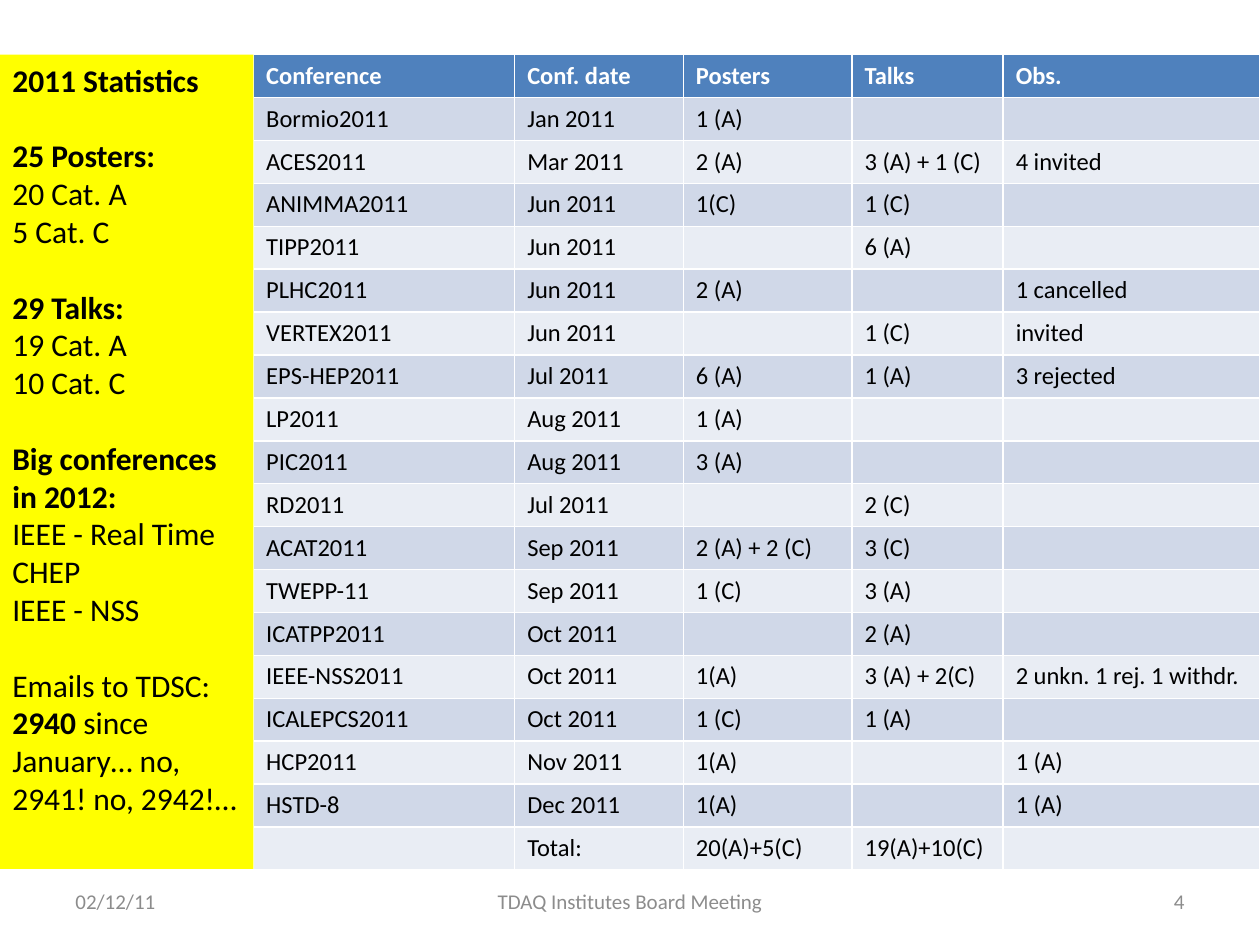
from lxml import etree
from pptx import Presentation
from pptx.dml.color import RGBColor
from pptx.enum.shapes import MSO_SHAPE
from pptx.enum.text import MSO_ANCHOR, PP_ALIGN
from pptx.oxml.ns import qn
from pptx.util import Pt

RECTANGLE = MSO_SHAPE.RECTANGLE
TOP, MIDDLE = MSO_ANCHOR.TOP, MSO_ANCHOR.MIDDLE
LEFT, CENTER, RIGHT = PP_ALIGN.LEFT, PP_ALIGN.CENTER, PP_ALIGN.RIGHT

BLACK = RGBColor(0x00, 0x00, 0x00)
WHITE = RGBColor(0xFF, 0xFF, 0xFF)
GRAY = RGBColor(0x8C, 0x8C, 0x8C)
YELLOW = RGBColor(0xFF, 0xFF, 0x00)
HEADER_BLUE = RGBColor(0x4F, 0x81, 0xBD)
BANDS = (RGBColor(0xD0, 0xD8, 0xE8), RGBColor(0xE9, 0xED, 0xF4))
FONT = "Calibri"

# Content
CONFERENCES = [
    ("Conference", "Conf. date", "Posters", "Talks", "Obs."),
    ("Bormio2011", "Jan 2011", "1 (A)", "", ""),
    ("ACES2011", "Mar 2011", "2 (A)", "3 (A) + 1 (C)", "4 invited"),
    ("ANIMMA2011", "Jun 2011", "1(C)", "1 (C)", ""),
    ("TIPP2011", "Jun 2011", "", "6 (A)", ""),
    ("PLHC2011", "Jun 2011", "2 (A)", "", "1 cancelled"),
    ("VERTEX2011", "Jun 2011", "", "1 (C)", "invited"),
    ("EPS-HEP2011", "Jul 2011", "6 (A)", "1 (A)", "3 rejected"),
    ("LP2011", "Aug 2011", "1 (A)", "", ""),
    ("PIC2011", "Aug 2011", "3 (A)", "", ""),
    ("RD2011", "Jul 2011", "", "2 (C)", ""),
    ("ACAT2011", "Sep 2011", "2 (A) + 2 (C)", "3 (C)", ""),
    ("TWEPP-11", "Sep 2011", "1 (C)", "3 (A)", ""),
    ("ICATPP2011", "Oct 2011", "", "2 (A)", ""),
    ("IEEE-NSS2011", "Oct 2011", "1(A)", "3 (A) + 2(C)", "2 unkn. 1 rej. 1 withdr."),
    ("ICALEPCS2011", "Oct 2011", "1 (C)", "1 (A)", ""),
    ("HCP2011", "Nov 2011", "1(A)", "", "1 (A)"),
    ("HSTD-8", "Dec 2011", "1(A)", "", "1 (A)"),
    ("", "Total:", "20(A)+5(C)", "19(A)+10(C)", ""),
]
# Each group is a list of paragraphs, each paragraph a list of (text, bold)
STATISTICS = [
    [[("2011 Statistics", True)]],
    [[("25 Posters:", True)], [("20 Cat. A", False)], [("5 Cat. C", False)]],
    [[("29 Talks:", True)], [("19 Cat. A", False)], [("10 Cat. C", False)]],
    [[("Big conferences in 2012:", True)], [("IEEE - Real Time", False)],
     [("CHEP", False)], [("IEEE - NSS", False)]],
    [[("Emails to TDSC:", False)],
     [("2940", True), (" since January… no, 2941! no, 2942!…", False)]],
]
# Text, left, width, alignment
FOOTERS = [
    ("02/12/11", 36, 168, LEFT),
    ("TDAQ Institutes Board Meeting", 246, 228, CENTER),
    ("4", 516, 168, RIGHT),
]

# Layout
CONTENT_TOP = 31.2
PANEL_WIDTH, PANEL_HEIGHT = 144.9, 465.3
COLUMN_WIDTHS = (149.2, 96.4, 96.4, 86.4, 146.7)
ROW_HEIGHT = 24.54
GROUP_GAP = 21.6
FOOTER_TOP, FOOTER_HEIGHT = 500.5, 28.75


def format_run(run, size, color, bold=False):
    run.font.name = FONT
    run.font.size = Pt(size)
    run.font.bold = bold
    run.font.color.rgb = color


def add_conference_table(slide):
    frame = slide.shapes.add_table(
        len(CONFERENCES), len(COLUMN_WIDTHS), Pt(PANEL_WIDTH), Pt(CONTENT_TOP),
        Pt(sum(COLUMN_WIDTHS)), Pt(ROW_HEIGHT * len(CONFERENCES)))
    table = frame.table
    for column, width in zip(table.columns, COLUMN_WIDTHS):
        column.width = Pt(width)
    for index, values in enumerate(CONFERENCES):
        header = index == 0
        table.rows[index].height = Pt(ROW_HEIGHT)
        for column, value in enumerate(values):
            cell = table.cell(index, column)
            cell.fill.solid()
            cell.fill.fore_color.rgb = HEADER_BLUE if header else BANDS[(index - 1) % 2]
            paragraph = cell.text_frame.paragraphs[0]
            if value:
                paragraph.text = value
                format_run(paragraph.runs[0], 14, WHITE if header else BLACK, header)
            else:
                # Keep empty cells from growing the row
                etree.SubElement(paragraph._p, qn("a:endParaRPr"), sz="1400")


def add_statistics_panel(slide):
    panel = slide.shapes.add_shape(
        RECTANGLE, 0, Pt(CONTENT_TOP), Pt(PANEL_WIDTH), Pt(PANEL_HEIGHT))
    panel.shadow.inherit = False
    panel.fill.solid()
    panel.fill.fore_color.rgb = YELLOW
    panel.line.fill.background()
    text_frame = panel.text_frame
    text_frame.word_wrap = True
    text_frame.vertical_anchor = TOP
    paragraph = None
    for group in STATISTICS:
        for position, parts in enumerate(group):
            if paragraph is None:
                paragraph = text_frame.paragraphs[0]
            else:
                paragraph = text_frame.add_paragraph()
                paragraph.space_before = Pt(0 if position else GROUP_GAP)
            paragraph.alignment = LEFT
            for text, bold in parts:
                run = paragraph.add_run()
                run.text = text
                format_run(run, 18, BLACK, bold)


def add_footers(slide):
    for text, left, width, alignment in FOOTERS:
        box = slide.shapes.add_textbox(
            Pt(left), Pt(FOOTER_TOP), Pt(width), Pt(FOOTER_HEIGHT))
        text_frame = box.text_frame
        text_frame.word_wrap = True
        text_frame.vertical_anchor = MIDDLE
        text_frame.text = text
        paragraph = text_frame.paragraphs[0]
        paragraph.alignment = alignment
        format_run(paragraph.runs[0], 12, GRAY)


def main():
    presentation = Presentation()
    presentation.slide_width, presentation.slide_height = Pt(720), Pt(540)
    slide = presentation.slides.add_slide(presentation.slide_layouts[6])
    add_footers(slide)
    add_conference_table(slide)
    add_statistics_panel(slide)
    presentation.save("out.pptx")


if __name__ == "__main__":
    main()
